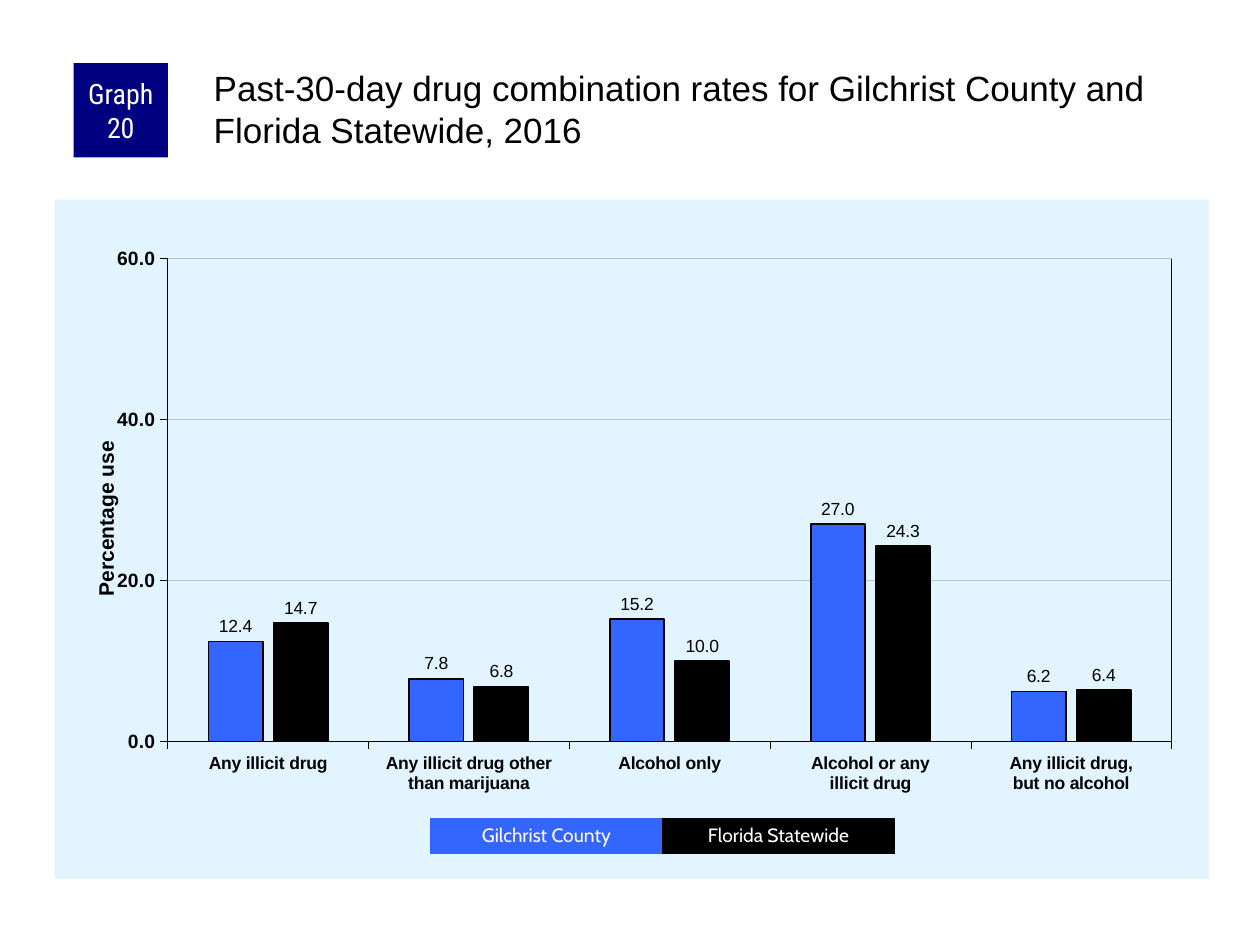
import pptx
import pptx.chart.data
import pptx.dml.color
import pptx.enum.chart
import pptx.enum.shapes
import pptx.enum.text
import pptx.oxml
import pptx.oxml.ns
import pptx.util

INK = {"navy": "000080", "blue": "3366FF", "black": "000000",
       "white": "FFFFFF", "pale": "E1F4FF", "grey": "C0C0C0"}
COLS, ROWS = 120, 90
AREA = (5.2, 19, 109.9, 64.7)
PLOT = (0.098, 0.087, 0.87, 0.711)
CATS = ["Any illicit drug", "Any illicit drug other than marijuana",
        "Alcohol only", "Alcohol or any\nillicit drug",
        "Any illicit drug,\nbut no alcohol"]
RATES = [("Gilchrist County", "blue", (12.4, 7.8, 15.2, 27.0, 6.2)),
         ("Florida Statewide", "black", (14.7, 6.8, 10.0, 24.3, 6.4))]


def tone(name):
    return pptx.dml.color.RGBColor.from_string(INK[name])


def grid(x, y, *rest):
    unit = pptx.util.Inches(10) / COLS
    return [int(v * unit) for v in (x, y, *rest)]


def paint(fill, name):
    fill.solid()
    fill.fore_color.rgb = tone(name)


def stroke(line, name, width):
    line.color.rgb = tone(name)
    line.width = pptx.util.Pt(width)


def style(font, face, size, name, bold=False):
    font.name = face
    font.size = pptx.util.Pt(size)
    font.bold = bold
    font.color.rgb = tone(name)


def write(frame, text, face, size, name, align=None):
    frame.word_wrap = True
    para = frame.paragraphs[0]
    para.alignment = align
    run = para.add_run()
    run.text = text
    style(run.font, face, size, name)
    return para


def inset(frame, left, top, right, bottom):
    frame.margin_left, frame.margin_top, frame.margin_right, frame.margin_bottom = (
        pptx.util.Inches(v) for v in (left, top, right, bottom))


def block(slide, box, fill, text, face, size):
    shape = slide.shapes.add_shape(pptx.enum.shapes.MSO_SHAPE.RECTANGLE, *grid(*box))
    shape.shadow.inherit = False
    paint(shape.fill, fill)
    shape.line.fill.background()
    para = write(shape.text_frame, text, face, size, "white",
                 pptx.enum.text.PP_ALIGN.CENTER)
    return shape, para


def head(slide):
    badge, _ = block(slide, (7, 6, 9, 9), "navy", "Graph 20", "Roboto Condensed", 16)
    inset(badge.text_frame, 0.05, 0, 0.05, 0)
    title = slide.shapes.add_textbox(*grid(20, 6, 95, 10)).text_frame
    inset(title, 0.03, 0.03, 0, 0)
    write(title, "Past-30-day drug combination rates for Gilchrist County "
                 "and Florida Statewide, 2016", "Arial", 20, "black")


def legend(slide):
    wide = 22.1
    for i, (name, color, _) in enumerate(RATES):
        key, para = block(slide, (41 + i * wide, 78, wide, 3.3), color, name, "Cabin", 11)
        stroke(key.line, color, 0.75)
        para.line_spacing = 0.9
        key.text_frame.auto_size = pptx.enum.text.MSO_AUTO_SIZE.SHAPE_TO_FIT_TEXT


def place(node, spot, **share):
    old = node.find(pptx.oxml.ns.qn("c:layout"))
    if old is not None:
        node.remove(old)
    modes = {"xMode": "edge", "yMode": "edge", **share}
    parts = "".join(f'<c:{k} val="{v}"/>' for k, v in modes.items())
    node.insert(spot, pptx.oxml.parse_xml(
        f'<c:layout {pptx.oxml.ns.nsdecls("c")}><c:manualLayout>'
        f'{parts}</c:manualLayout></c:layout>'))


def axis(item, size):
    style(item.tick_labels.font, "Arial", size, "black", True)
    stroke(item.format.line, "black", 0.25)
    item.major_tick_mark = pptx.enum.chart.XL_TICK_MARK.OUTSIDE
    item.minor_tick_mark = pptx.enum.chart.XL_TICK_MARK.NONE


def scale(item):
    axis(item, 11)
    item.minimum_scale, item.maximum_scale, item.major_unit = 0, 60, 20
    item.has_major_gridlines = True
    stroke(item.major_gridlines.format.line, "grey", 0.25)
    frame = item.axis_title.text_frame
    run = frame.paragraphs[0].add_run()
    run.text = "Percentage use"
    style(run.font, "Arial", 12, "black", True)
    body = frame._txBody.bodyPr
    body.set("rot", "-5400000")
    body.set("vert", "horz")
    place(item.axis_title._element, 1, x=0.03, y=0.35)


def bars(series, color):
    paint(series.format.fill, color)
    stroke(series.format.line, "black", 1)
    series.invert_if_negative = False
    tags = series.data_labels
    tags.show_value = True
    tags.number_format = "0.0"
    tags.number_format_is_linked = False
    tags.position = pptx.enum.chart.XL_LABEL_POSITION.OUTSIDE_END
    style(tags.font, "Arial", 10, "black")


def graph(slide):
    data = pptx.chart.data.CategoryChartData(number_format="0.0")
    data.categories = CATS
    for i, (_, _, vals) in enumerate(RATES, 1):
        data.add_series(f"Series {i}", vals)
    chart = slide.shapes.add_chart(
        pptx.enum.chart.XL_CHART_TYPE.COLUMN_CLUSTERED, *grid(*AREA), data).chart
    chart.has_legend = chart.has_title = False
    style(chart.font, "Arial", 11.5, "black")
    plot = chart.plots[0]
    plot.gap_width, plot.overlap, plot.vary_by_categories = 150, -20, False
    for series, (_, color, _) in zip(plot.series, RATES):
        bars(series, color)
    axis(chart.category_axis, 10)
    scale(chart.value_axis)
    root = chart._chartSpace.find(pptx.oxml.ns.qn("c:chart"))
    x, y, w, h = PLOT
    place(root.find(pptx.oxml.ns.qn("c:plotArea")), 0,
          layoutTarget="inner", xMode="edge", yMode="edge", x=x, y=y, w=w, h=h)
    area = root.getparent().find(pptx.oxml.ns.qn("c:spPr"))
    if area is not None:
        root.getparent().remove(area)
    root.addnext(pptx.oxml.parse_xml(
        f'<c:spPr {pptx.oxml.ns.nsdecls("c", "a")}><a:solidFill>'
        f'<a:srgbClr val="{INK["pale"]}"/></a:solidFill>'
        '<a:ln><a:noFill/></a:ln></c:spPr>'))
    layout = root.find(".//" + pptx.oxml.ns.qn("c:manualLayout"))
    layout.insert(0, layout.find(pptx.oxml.ns.qn("c:layoutTarget")))


def edge(slide):
    left, top, wide, high = AREA
    x, y, w, h = PLOT
    right = left + (x + w) * wide
    ends = grid(right, top + y * high, right, top + (y + h) * high)
    line = slide.shapes.add_connector(pptx.enum.shapes.MSO_CONNECTOR.STRAIGHT, *ends)
    stroke(line.line, "navy", 1)
    line._element.spPr.append(pptx.oxml.parse_xml(
        f'<a:effectLst {pptx.oxml.ns.nsdecls("a")}/>'))


def main():
    deck = pptx.Presentation()
    deck.slide_width, deck.slide_height = grid(COLS, ROWS)
    slide = deck.slides.add_slide(deck.slide_layouts[6])
    graph(slide)
    edge(slide)
    head(slide)
    legend(slide)
    deck.save("out.pptx")


if __name__ == "__main__":
    main()
